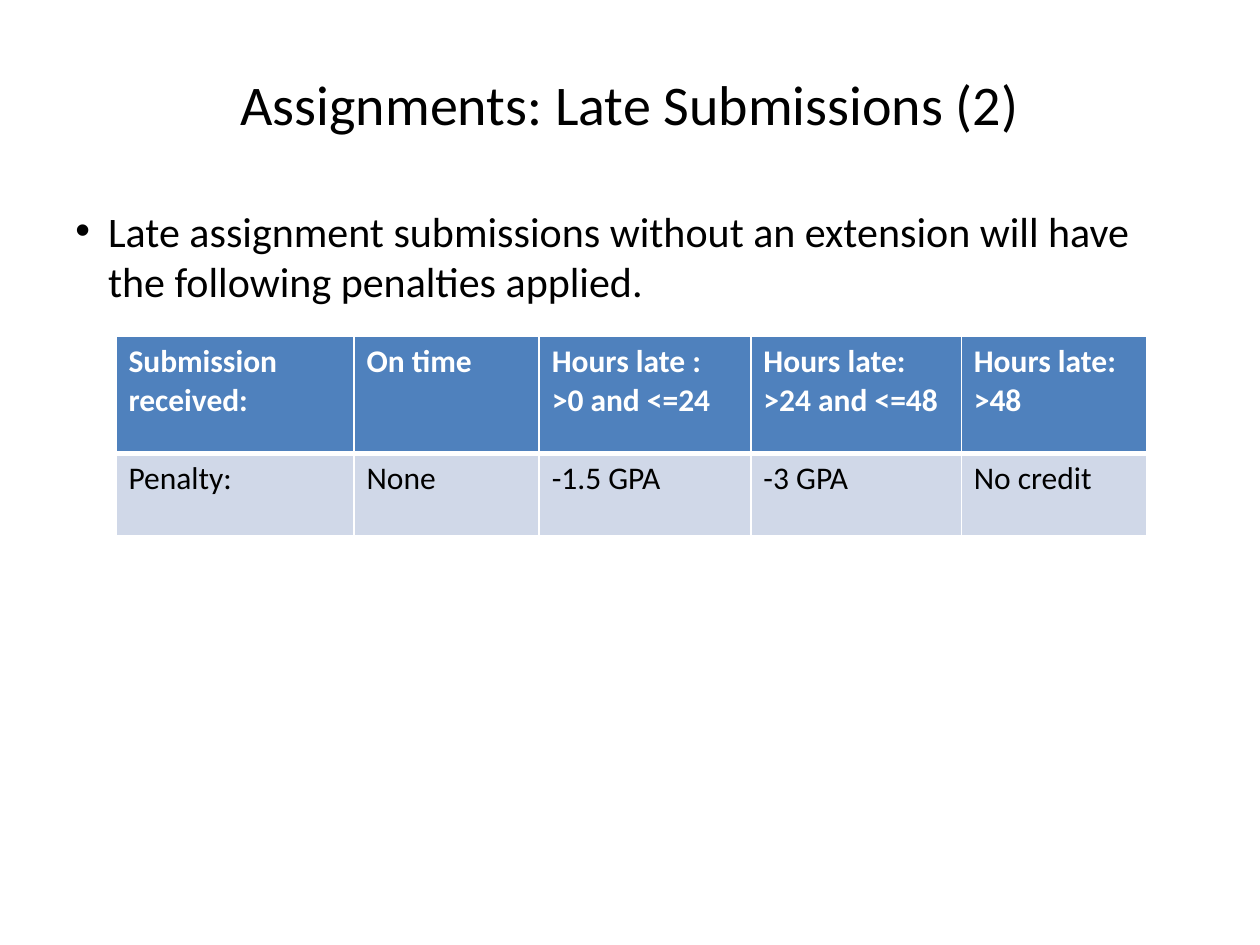
from lxml import etree
from pptx import Presentation
from pptx.dml.color import RGBColor
from pptx.enum.text import MSO_ANCHOR, PP_ALIGN
from pptx.oxml.ns import qn
from pptx.util import Inches, Pt

CENTER, LEFT = PP_ALIGN.CENTER, PP_ALIGN.LEFT
MIDDLE, TOP = MSO_ANCHOR.MIDDLE, MSO_ANCHOR.TOP
BLACK = RGBColor(0x00, 0x00, 0x00)
WHITE = RGBColor(0xFF, 0xFF, 0xFF)
BLUE = RGBColor(0x4F, 0x81, 0xBD)
PALE_BLUE = RGBColor(0xD0, 0xD8, 0xE8)
TITLE_ONLY = 5
THIN, THICK = 1, 3

COLUMN_WIDTHS = (1.89, 1.47, 1.68, 1.67, 1.47)
ROW_HEIGHTS = (0.93, 0.65)
PENALTIES = (
    ("Submission received:", "On time", "Hours late : >0 and <=24",
     "Hours late: >24 and <=48", "Hours late: >48"),
    ("Penalty:", "None", "-1.5 GPA", "-3 GPA", "No credit"),
)


class SlideBuilder:
    """Hold the text style and the current slide, and add elements to it."""

    font = "Calibri"

    def __init__(self, page):
        self.page = page

    def add_text(self, frame, text, size, color=BLACK, bold=False, align=LEFT):
        frame.word_wrap = True
        para = frame.paragraphs[0]
        para.alignment = align
        span = para.add_run()
        span.text = text
        span.font.name = self.font
        span.font.size = Pt(size)
        span.font.bold = bold
        span.font.color.rgb = color
        return para

    def title(self, text, left, top, width, height):
        box = self.page.shapes.title
        box.left, box.top = Inches(left), Inches(top)
        box.width, box.height = Inches(width), Inches(height)
        box.text_frame.vertical_anchor = MIDDLE
        self.add_text(box.text_frame, text, 32, align=CENTER)

    def bullet(self, text, left, top, width, height):
        box = self.page.shapes.add_textbox(
            Inches(left), Inches(top), Inches(width), Inches(height))
        box.text_frame.vertical_anchor = TOP
        para = self.add_text(box.text_frame, text, 24)
        para.space_before = Pt(4.8)
        properties = para._p.get_or_add_pPr()
        indent = Inches(0.26)
        properties.set("marL", str(indent))
        properties.set("indent", str(-indent))
        etree.SubElement(properties, qn("a:buFont"), typeface="Arial")
        etree.SubElement(properties, qn("a:buChar"), char="•")

    def borders(self, cell, widths):
        properties = cell._tc.get_or_add_tcPr()
        for side, width in zip("LRTB", widths):
            line = etree.SubElement(properties, qn(f"a:ln{side}"), w=str(Pt(width)))
            fill = etree.SubElement(line, qn("a:solidFill"))
            etree.SubElement(fill, qn("a:srgbClr"), val=str(WHITE))

    def table(self, rows, left, top, widths, heights):
        table = self.page.shapes.add_table(
            len(rows), len(widths), Inches(left), Inches(top),
            Inches(sum(widths)), Inches(sum(heights))).table
        for column, width in zip(table.columns, widths):
            column.width = Inches(width)
        for row, height in zip(table.rows, heights):
            row.height = Inches(height)
        for row_index, texts in enumerate(rows):
            header = row_index == 0
            edges = (THIN, THIN, THIN, THICK) if header else (THIN, THIN, THICK, THIN)
            for column_index, text in enumerate(texts):
                cell = table.cell(row_index, column_index)
                self.borders(cell, edges)
                cell.fill.solid()
                cell.fill.fore_color.rgb = BLUE if header else PALE_BLUE
                self.add_text(cell.text_frame, text, 18, WHITE if header else BLACK, header)


def main():
    deck = Presentation()
    deck.slide_width, deck.slide_height = Inches(10), Inches(7.5)
    slide = SlideBuilder(deck.slides.add_slide(deck.slide_layouts[TITLE_ONLY]))
    slide.title("Assignments: Late Submissions (2)", 0.5, 0.3, 9, 1.03)
    slide.bullet("Late assignment submissions without an extension will have "
                 "the following penalties applied.", 0.5, 1.58, 9, 5.5)
    slide.table(PENALTIES, 0.92, 2.67, COLUMN_WIDTHS, ROW_HEIGHTS)
    deck.save("out.pptx")


if __name__ == "__main__":
    main()
